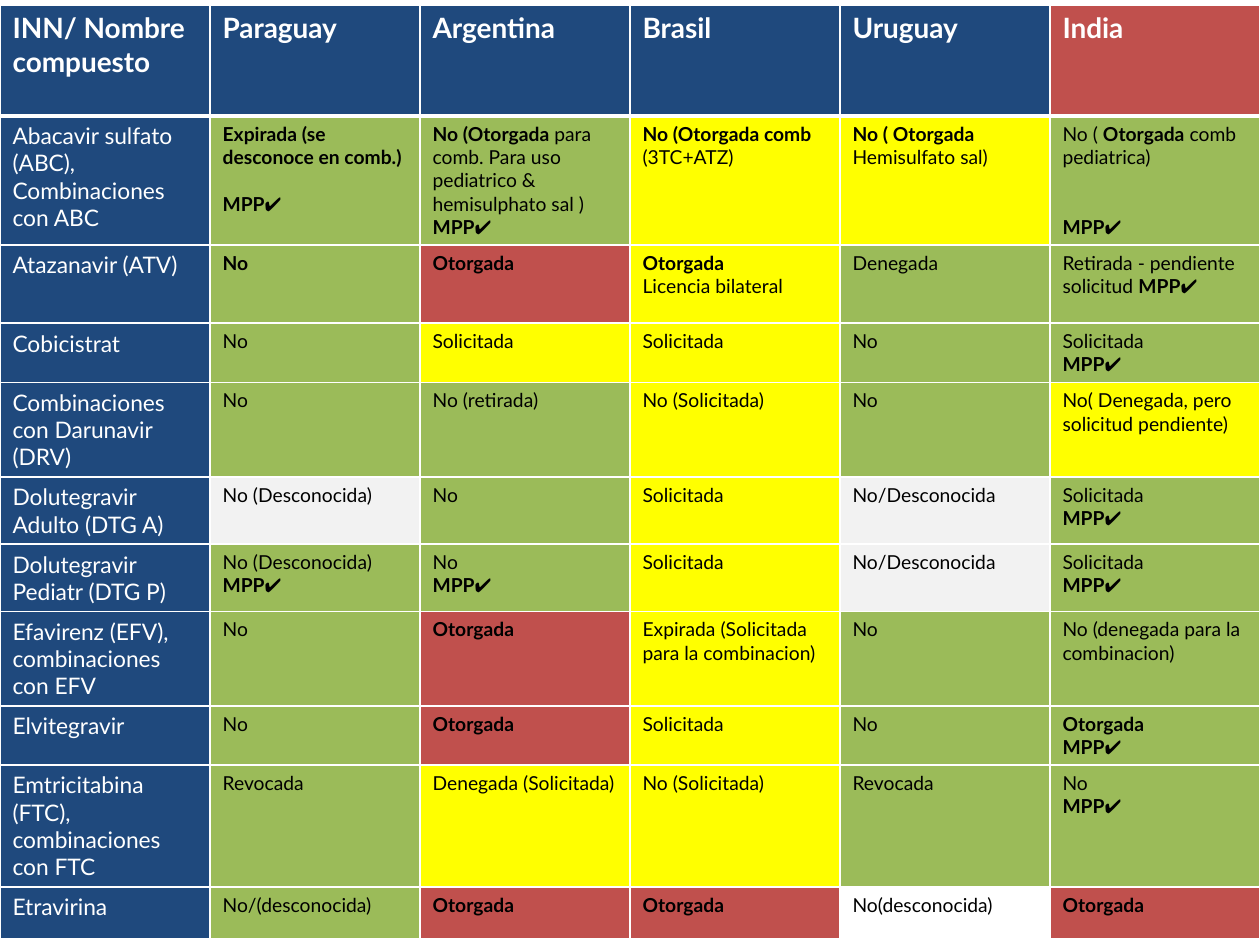
from dataclasses import dataclass

from lxml.etree import SubElement
from pptx import Presentation
from pptx.dml.color import RGBColor
from pptx.oxml.ns import qn
from pptx.util import Inches, Pt

COLORS = {
    "navy": "1F497D", "red": "C0504D", "green": "9BBB59", "yellow": "FFFF00",
    "gray": "F2F2F2", "white": "FFFFFF", "black": "000000",
}
HEADER = {"size": Pt(16), "name": "Lato", "bold": True}
COMPOUND = {"size": Pt(13), "name": "Lato", "bold": False}
STATUS = {"size": Pt(11), "name": "Lato", "bold": False}
LINE = 13.2  # points in one line of status text
MPP = "*MPP✔*"


@dataclass(frozen=True)
class Cell:
    """Text lines, with *bold* parts; gap counts the lines left free before the last one."""
    fill: str
    lines: tuple[str, ...]
    gap: int = 0


@dataclass(frozen=True)
class Row:
    height: float
    compound: str
    cells: tuple[Cell, ...]


def green(*lines: str, gap: int = 0) -> Cell:
    return Cell("green", lines, gap)


def yellow(*lines: str) -> Cell:
    return Cell("yellow", lines)


def gray(*lines: str) -> Cell:
    return Cell("gray", lines)


NO = green("No")
NO_MPP = green("No", MPP)
APPLIED = yellow("Solicitada")
APPLIED_MPP = green("Solicitada", MPP)
GRANTED = Cell("red", ("*Otorgada*",))
REVOKED = green("Revocada")
UNKNOWN = gray("No/Desconocida")

COUNTRIES = ("Paraguay", "Argentina", "Brasil", "Uruguay", "India")
HEADER_HEIGHT = 0.88
ROWS = (
    Row(0.95, "Abacavir sulfato (ABC), Combinaciones con ABC", (
        green("*Expirada (se desconoce en comb.)*", MPP, gap=1),
        green("*No (Otorgada *para comb. Para uso pediatrico & hemisulphato sal )", MPP),
        yellow("*No (Otorgada comb *(3TC+ATZ)"),
        yellow("*No ( Otorgada *Hemisulfato sal)"),
        green("No ( *Otorgada* comb pediatrica)", MPP, gap=2))),
    Row(0.62, "Atazanavir (ATV)", (
        green("*No*"), GRANTED, yellow("*Otorgada*", "Licencia bilateral"),
        green("Denegada"), green("Retirada - pendiente solicitud " + MPP))),
    Row(0.31, "Cobicistrat", (NO, APPLIED, APPLIED, NO, APPLIED_MPP)),
    Row(0.74, "Combinaciones con Darunavir (DRV)", (
        NO, green("No (retirada)"), yellow("No (Solicitada)"), NO,
        yellow("No( Denegada, pero solicitud pendiente)"))),
    Row(0.52, "Dolutegravir Adulto (DTG A)", (
        gray("No (Desconocida)"), NO, APPLIED, UNKNOWN, APPLIED_MPP)),
    Row(0.52, "Dolutegravir Pediatr (DTG P)", (
        green("No (Desconocida)", MPP), NO_MPP, APPLIED, UNKNOWN, APPLIED_MPP)),
    Row(0.74, "Efavirenz (EFV), combinaciones con EFV", (
        NO, GRANTED, yellow("Expirada (Solicitada para la combinacion)"), NO,
        green("No (denegada para la combinacion)"))),
    Row(0.41, "Elvitegravir", (NO, GRANTED, APPLIED, NO, green("*Otorgada*", MPP))),
    Row(0.76, "Emtricitabina (FTC), combinaciones con FTC", (
        REVOKED, yellow("Denegada (Solicitada)"), yellow("No (Solicitada)"),
        REVOKED, NO_MPP)),
    Row(0.41, "Etravirina", (
        green("No/(desconocida)"), GRANTED, GRANTED,
        Cell("white", ("No(desconocida)",)), GRANTED)),
)


def add_run(p, text: str, color: str, formats: dict) -> None:
    if not text:
        return
    r = p.add_run()
    r.text = text
    for name, value in formats.items():
        setattr(r.font, name, value)
    r.font.color.rgb = RGBColor.from_string(COLORS[color])


def add_line(p, line: str, color: str, formats: dict) -> None:
    """Write one paragraph: *parts* become bold and check marks use Arial."""
    for i, part in enumerate(line.split("*")):
        style = {**formats, "bold": formats["bold"] or i % 2 == 1}
        text, check, rest = part.partition("✔")
        add_run(p, text, color, style)
        add_run(p, check, color, {**style, "name": "Arial"})
        add_run(p, rest, color, style)


def set_borders(tc, bottom: float = 1, top: float = 1) -> None:
    tc_pr = tc._tc.get_or_add_tcPr()
    for side, width in {"L": 1, "R": 1, "T": top, "B": bottom}.items():
        ln = SubElement(tc_pr, qn(f"a:ln{side}"), w=str(Pt(width)))
        SubElement(SubElement(ln, qn("a:solidFill")), qn("a:srgbClr"), val=COLORS["white"])


def fill_cell(tc, cell: Cell, color: str, formats: dict) -> None:
    tc.fill.solid()
    tc.fill.fore_color.rgb = RGBColor.from_string(COLORS[cell.fill])
    tf = tc.text_frame
    for i, line in enumerate(cell.lines):
        p = tf.add_paragraph() if i else tf.paragraphs[0]
        add_line(p, line, color, formats)
    if cell.gap:
        p.space_before = Pt(cell.gap * LINE)


def main() -> None:
    prs = Presentation()
    prs.slide_width, prs.slide_height = Inches(10), Inches(7.5)
    s = prs.slides.add_slide(prs.slide_layouts[6])
    n_cols = len(COUNTRIES) + 1
    frame = s.shapes.add_table(len(ROWS) + 1, n_cols, 0, Inches(0.04),
                               prs.slide_width, Inches(7.39))
    table = frame.table
    for column in table.columns:
        column.width = prs.slide_width // n_cols

    table.rows[0].height = Inches(HEADER_HEIGHT)
    for j, title in enumerate(("INN/ Nombre compuesto", *COUNTRIES)):
        tc = table.cell(0, j)
        set_borders(tc, bottom=3)
        fill_cell(tc, Cell("red" if title == "India" else "navy", (title,)), "white", HEADER)

    for i, row in enumerate(ROWS, 1):
        table.rows[i].height = Inches(row.height)
        for j, cell in enumerate((Cell("navy", (row.compound,)), *row.cells)):
            tc = table.cell(i, j)
            set_borders(tc, top=3 if i == 1 else 1)
            if j:
                fill_cell(tc, cell, "black", STATUS)
            else:
                fill_cell(tc, cell, "white", COMPOUND)

    prs.save("out.pptx")


if __name__ == "__main__":
    main()
